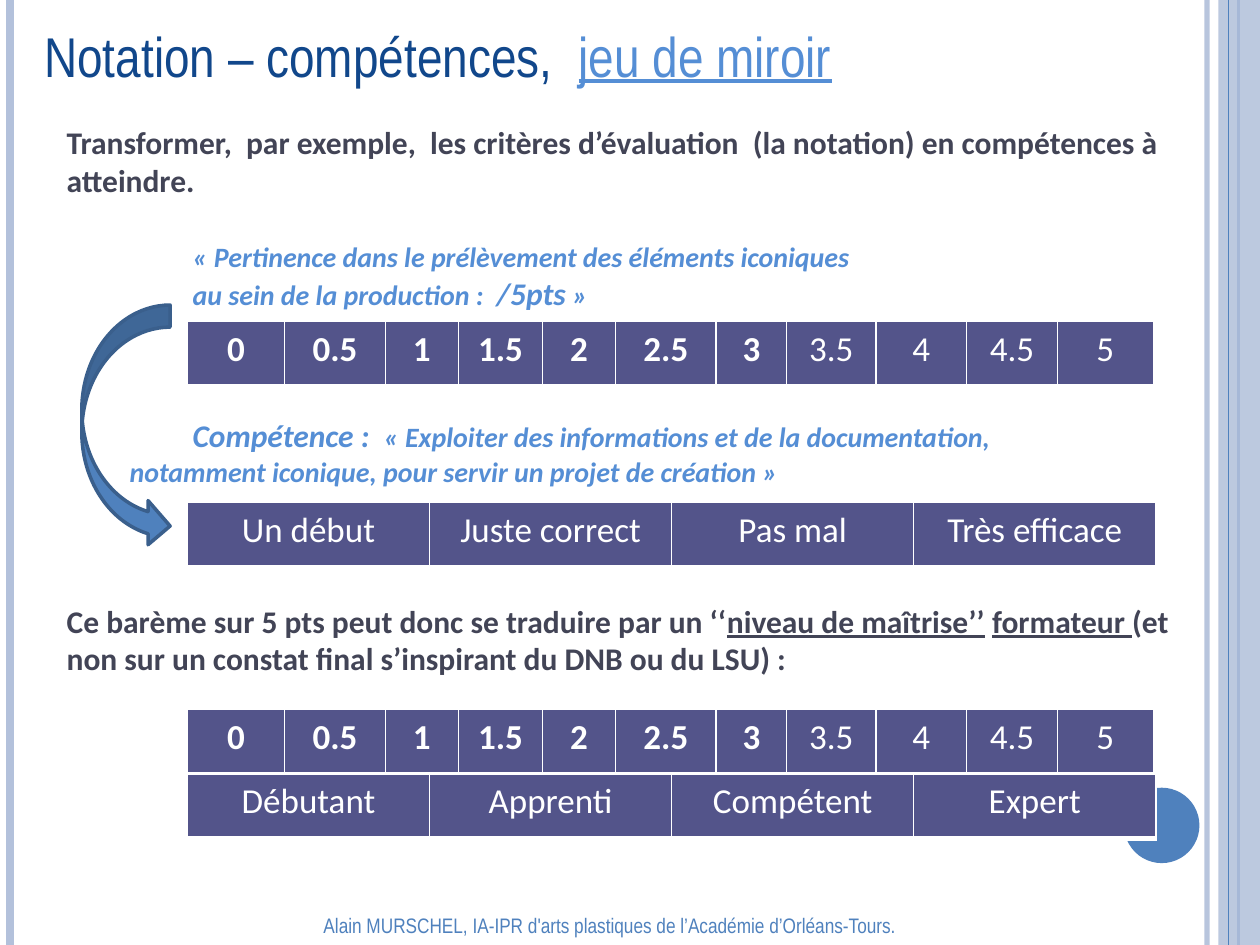
from dataclasses import dataclass

from lxml.etree import SubElement
from pptx import Presentation
from pptx.dml.color import RGBColor
from pptx.enum.shapes import MSO_CONNECTOR, MSO_SHAPE
from pptx.enum.text import MSO_ANCHOR, MSO_AUTO_SIZE, PP_ALIGN
from pptx.oxml.ns import qn
from pptx.util import Cm, Pt

BLUE, PALE, SKY, NAVY = "4F81BD", "B3C1DB", "558ED5", "11478B"
INK, VIOLET, WHITE = "424456", "53548A", "FFFFFF"
PAGE_WIDTH, PAGE_HEIGHT = 25.4, 19.05
TABLE_LEFT, ROW_HEIGHT = 3.78, 1.3

MARKS = ["0", "0.5", "1", "1.5", "2", "2.5", "3", "3.5", "4", "4.5", "5"]
MARK_WIDTHS = [1.96, 2.03, 1.47, 1.7, 1.47, 2.03, 1.42, 1.8, 1.83, 1.83, 1.93]
BOLD_MARKS = 7
LEVEL_WIDTHS = [4.88] * 4


@dataclass
class Stripe:
    x: float
    color: str
    weight: float
    opacity: int = 100


@dataclass
class Span:
    text: str
    size: float = 18
    color: str = INK
    bold: bool = True
    italic: bool = False
    underline: bool = False
    font: str = "Calibri"


@dataclass
class Para:
    spans: list[Span]
    before: float = 0
    indent: float = 0


@dataclass
class Scale:
    top: float
    labels: list[str]
    widths: list[float]
    bold_count: int = 0


def rgb(color: str) -> RGBColor:
    return RGBColor.from_string(color)


def quote(text: str, size: float = 16) -> Span:
    return Span(text, size, SKY, italic=True)


def narrow(text: str, size: float, color: str, underline: bool = False) -> Span:
    return Span(text, size, color, bold=False, underline=underline, font="Arial Narrow")


STRIPES = [Stripe(24.33, PALE, 3, 93), Stripe(0.2, PALE, 4.5), Stripe(24.97, BLUE, 1.5)]
FRONT_STRIPE = Stripe(24.77, BLUE, 0.75)

TITLE = [narrow("Notation – compétences,  ", 32, NAVY), narrow("jeu de miroir", 32, SKY, True)]
FOOTER = [narrow("Alain MURSCHEL, IA-IPR d'arts plastiques de l’Académie d’Orléans-Tours.", 12, BLUE)]

BODY = [
    Para([Span("Transformer,  par exemple,  les critères d’évaluation  (la notation) "
               "en compétences à atteindre.")]),
    Para([quote("« Pertinence dans le prélèvement des éléments iconiques")], 23, 2.54),
    Para([quote("au sein de la production :  "), quote("/5pts", 18), quote(" »")], 0.5, 2.54),
    Para([quote("Compétence :  ", 18),
          quote("« Exploiter des informations et de la documentation,")], 60, 2.54),
    Para([quote("notamment iconique, pour servir un projet de création »")], 0, 1.27),
    Para([Span("Ce barème sur 5 pts peut donc se traduire par un ‘‘"),
          Span("niveau de maîtrise’’", underline=True), Span(" "),
          Span("formateur ", underline=True),
          Span("(et non sur un constat final s’inspirant du DNB ou du LSU) :")], 65),
]

SCALES = [
    Scale(6.48, MARKS, MARK_WIDTHS, BOLD_MARKS),
    Scale(10.13, ["Un début", "Juste correct", "Pas mal", "Très efficace"], LEVEL_WIDTHS),
    Scale(14.3, MARKS, MARK_WIDTHS, BOLD_MARKS),
    Scale(15.6, ["Débutant", "Apprenti", "Compétent", "Expert"], LEVEL_WIDTHS),
]


def set_opacity(holder, percent: int) -> None:
    for color in holder.iter(qn("a:srgbClr")):
        SubElement(color, qn("a:alpha"), val=str(percent * 1000))


def draw_stripe(page, stripe: Stripe) -> None:
    line = page.shapes.add_connector(
        MSO_CONNECTOR.STRAIGHT, Cm(stripe.x), 0, Cm(stripe.x), Cm(PAGE_HEIGHT))
    line.line.color.rgb = rgb(stripe.color)
    line.line.width = Pt(stripe.weight)
    properties = line._element.spPr
    if stripe.opacity < 100:
        set_opacity(properties, stripe.opacity)
    SubElement(properties, qn("a:effectLst"))


def draw_shape(page, kind, left, top, width, height, fill, outline=None):
    shape = page.shapes.add_shape(kind, Cm(left), Cm(top), Cm(width), Cm(height))
    shape.shadow.inherit = False
    shape.fill.solid()
    shape.fill.fore_color.rgb = rgb(fill)
    if outline:
        shape.line.color.rgb = rgb(outline)
        shape.line.width = Pt(2)
    else:
        shape.line.fill.background()
    return shape


def place(box, left: float, top: float, width: float, height: float, anchor) -> None:
    box.left, box.top, box.width, box.height = Cm(left), Cm(top), Cm(width), Cm(height)
    frame = box.text_frame
    frame.word_wrap = True
    frame.auto_size = MSO_AUTO_SIZE.NONE
    frame.vertical_anchor = anchor


def write(para, spans: list[Span], align=PP_ALIGN.LEFT) -> None:
    para.alignment = align
    for span in spans:
        run = para.add_run()
        run.text = span.text
        font = run.font
        font.name, font.size, font.color.rgb = span.font, Pt(span.size), rgb(span.color)
        font.bold, font.italic, font.underline = span.bold, span.italic, span.underline


def write_body(frame, paras: list[Para]) -> None:
    for number, item in enumerate(paras):
        para = frame.add_paragraph() if number else frame.paragraphs[0]
        write(para, item.spans)
        para.space_before = Pt(item.before)
        properties = para._p.get_or_add_pPr()
        properties.set("marL", str(Cm(item.indent)))
        properties.set("indent", "0")
        SubElement(properties, qn("a:buNone"))


def add_borders(cell) -> None:
    properties = cell._tc.get_or_add_tcPr()
    for side, weight in (("L", 1), ("R", 1), ("T", 1), ("B", 3)):
        border = SubElement(properties, qn(f"a:ln{side}"), w=str(Pt(weight)))
        SubElement(SubElement(border, qn("a:solidFill")), qn("a:srgbClr"), val=WHITE)


def draw_scale(page, scale: Scale) -> None:
    table = page.shapes.add_table(
        1, len(scale.labels), Cm(TABLE_LEFT), Cm(scale.top),
        Cm(sum(scale.widths)), Cm(ROW_HEIGHT)).table
    table.first_row = table.horz_banding = False
    for number, (label, width) in enumerate(zip(scale.labels, scale.widths)):
        table.columns[number].width = Cm(width)
        cell = table.cell(0, number)
        add_borders(cell)
        cell.fill.solid()
        cell.fill.fore_color.rgb = rgb(VIOLET)
        span = Span(label, 20, WHITE, bold=number < scale.bold_count)
        write(cell.text_frame.paragraphs[0], [span], PP_ALIGN.CENTER)


def main() -> None:
    deck = Presentation()
    deck.slide_width, deck.slide_height = Cm(PAGE_WIDTH), Cm(PAGE_HEIGHT)
    page = deck.slides.add_slide(deck.slide_layouts[1])
    title, body = page.shapes.title, page.placeholders[1]

    for stripe in STRIPES:
        draw_stripe(page, stripe)
    band = draw_shape(page, MSO_SHAPE.RECTANGLE, 24.56, 0, 0.84, PAGE_HEIGHT, PALE)
    set_opacity(band._element.spPr, 87)
    draw_stripe(page, FRONT_STRIPE)
    draw_shape(page, MSO_SHAPE.OVAL, 22.66, 15.88, 1.52, 1.52, BLUE)

    place(body, 1.09, 2.36, 22.78, 12.32, MSO_ANCHOR.TOP)
    write_body(body.text_frame, BODY)
    place(title, 0.64, 0.3, 20.78, 1.63, MSO_ANCHOR.TOP)
    write(title.text_frame.paragraphs[0], TITLE)

    for scale in SCALES:
        draw_scale(page, scale)
    draw_shape(page, MSO_SHAPE.CURVED_RIGHT_ARROW, 1.65, 6.15, 1.78, 4.9, BLUE, "3A5F8C")

    footer = page.shapes.add_textbox(0, 0, 0, 0)
    place(footer, 0, 18.24, 24.59, 0.81, MSO_ANCHOR.MIDDLE)
    write(footer.text_frame.paragraphs[0], FOOTER, PP_ALIGN.CENTER)
    deck.save("out.pptx")


if __name__ == "__main__":
    main()
